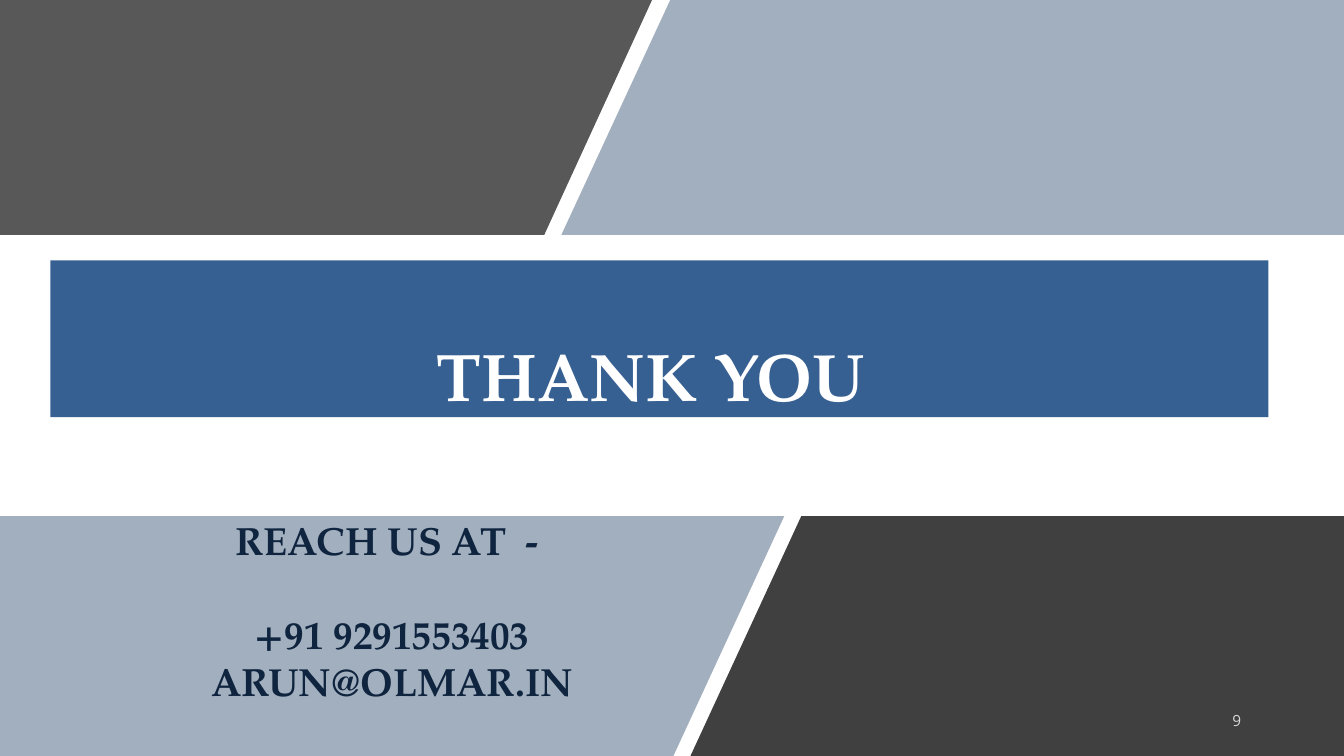
import pptx
import pptx.dml.color
import pptx.enum.shapes
import pptx.enum.text
import pptx.oxml
import pptx.oxml.ns
import pptx.util

Pt = pptx.util.Pt
ALIGN = pptx.enum.text.PP_ALIGN
ANCHOR = pptx.enum.text.MSO_ANCHOR
RECT = pptx.enum.shapes.MSO_SHAPE.RECTANGLE

COLORS = {
    "band": "376092",
    "gray": "585858",
    "dark": "404040",
    "navy": "17375E",
    "ink": "0F243E",
    "white": "FFFFFF",
    "number": "D9D9D9",
}
SERIF = "TeX Gyre Pagella"
WIDE, HIGH = 960, 540
UPPER, LOWER = 167.8, 368.6


def paint(shape, color, alpha=None):
    """Fill a shape flat, without line or shadow; alpha is opacity in percent."""
    shape.shadow.inherit = False
    shape.line.fill.background()
    shape.fill.solid()
    shape.fill.fore_color.rgb = pptx.dml.color.RGBColor.from_string(COLORS[color])
    if alpha:
        tint = shape.fill._xPr.find(".//" + pptx.oxml.ns.qn("a:srgbClr"))
        tint.append(pptx.oxml.parse_xml(
            f'<a:alpha {pptx.oxml.ns.nsdecls("a")} val="{alpha * 1000}"/>'))


def write(shape, lines, size, color, font, bold=True, top=0):
    """Set centred lines from the top of a shape."""
    frame = shape.text_frame
    frame.word_wrap = True
    frame.vertical_anchor = ANCHOR.TOP
    frame.margin_left = frame.margin_right = frame.margin_bottom = 0
    frame.margin_top = Pt(top)
    frame.text = "\n".join(lines)
    for para in frame.paragraphs:
        para.alignment = ALIGN.CENTER
        para.font.size = Pt(size)
        para.font.name = font
        para.font.bold = bold
        para.font.color.rgb = pptx.dml.color.RGBColor.from_string(COLORS[color])
    return frame.paragraphs


deck = pptx.Presentation()
deck.slide_width, deck.slide_height = Pt(WIDE), Pt(HIGH)
slide = deck.slides.add_slide(deck.slide_layouts[6])
shapes = slide.shapes

# Title band
band = shapes.add_shape(RECT, Pt(36), Pt(186), Pt(870), Pt(112))
paint(band, "band")
title = write(band, ["THANK YOU "], 48, "white", SERIF, top=55.5)
title[0].line_spacing = Pt(54.8)

# Slanted panels: top, bottom, outer edge, slant x at top and bottom
panels = [
    (0, UPPER, 0, 465.8, 388.8, "gray", None),
    (0, UPPER, WIDE, 478.8, 401, "navy", 40),
    (LOWER, HIGH, WIDE, 572.4, 493.2, "dark", None),
    (LOWER, HIGH, 0, 560.2, 481, "navy", 40),
]
for top, base, edge, high, low, color, alpha in panels:
    outline = shapes.build_freeform(Pt(high), Pt(top), scale=1)
    corners = [(edge, top), (edge, base), (low, base)]
    outline.add_line_segments([(Pt(x), Pt(y)) for x, y in corners], close=True)
    panel = outline.convert_to_shape()
    paint(panel, color, alpha)

# Contact lines sit in the last panel, bottom left
reach = ["REACH US AT  - ", "+91 9291553403", "ARUN@OLMAR.IN"]
contact = write(panel, reach, 28, "ink", SERIF)
contact[1].space_before = Pt(33.6)

# Slide number
number = shapes.add_textbox(Pt(873.5), Pt(508), Pt(20), Pt(16))
write(number, ["9"], 11, "number", "Open Sans", bold=False)

deck.save("out.pptx")
